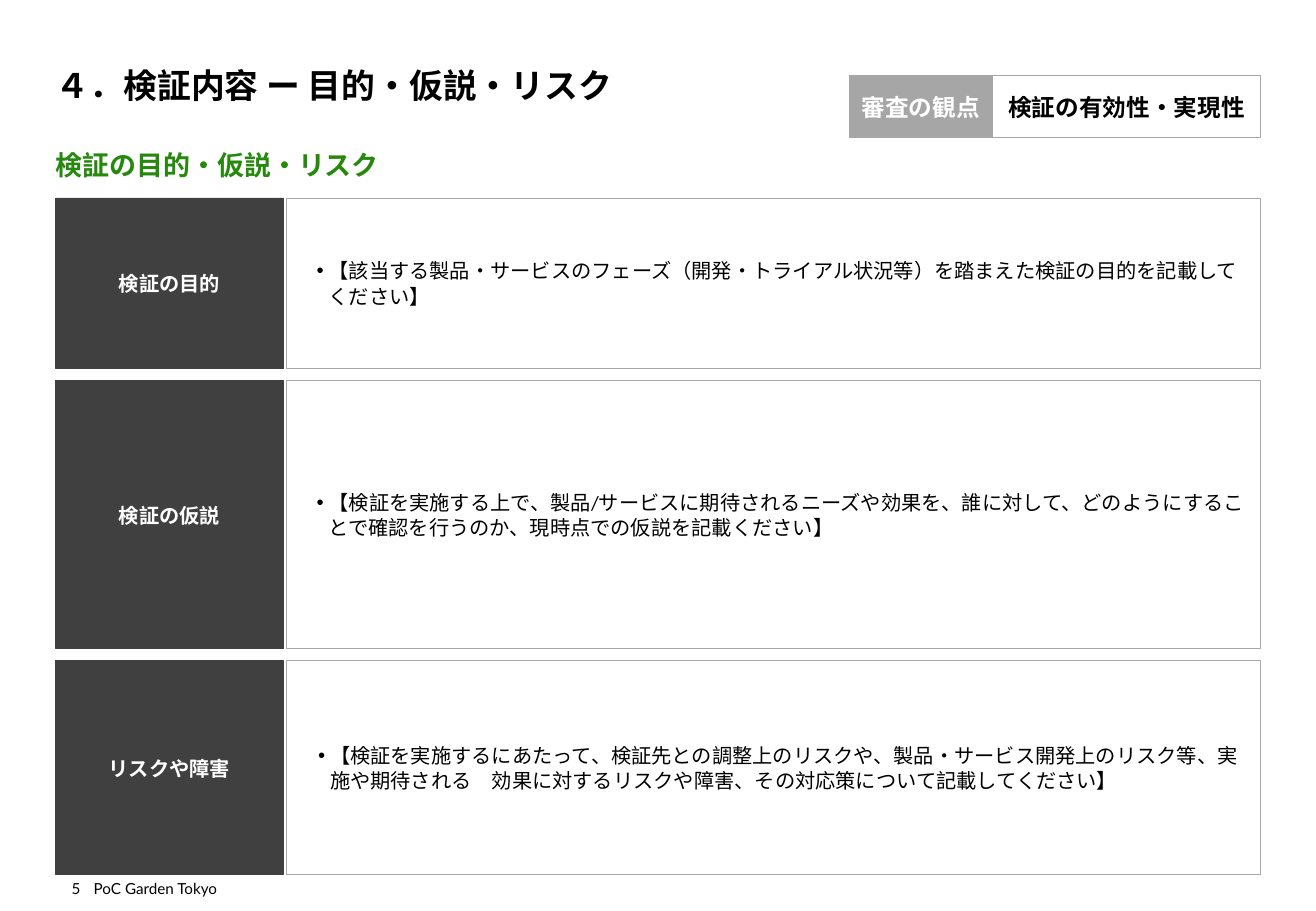
"""Build the verification slide: purpose, hypothesis and risks."""
from lxml.etree import SubElement
from pptx import Presentation
from pptx.dml.color import RGBColor
from pptx.enum.shapes import MSO_SHAPE
from pptx.enum.text import MSO_ANCHOR as Anchor, PP_ALIGN as Align
from pptx.oxml.ns import qn
from pptx.util import Cm, Pt

CJK = "Noto Sans CJK JP"


def color(hex_string):
    return RGBColor.from_string(hex_string)


def add_text(shape, text, size, font, text_color, bold=False, align=Align.LEFT,
             anchor=Anchor.MIDDLE, insets=(0, 0, 0, 0), wrap=True, bullet_indent=None):
    frame = shape.text_frame
    frame.word_wrap = wrap
    frame.vertical_anchor = anchor
    frame.margin_left, frame.margin_top, frame.margin_right, frame.margin_bottom = map(Cm, insets)
    paragraph = frame.paragraphs[0]
    paragraph.text = text
    paragraph.alignment = align
    properties = paragraph._p.get_or_add_pPr()
    if bullet_indent is not None:
        properties.set("marL", str(Cm(bullet_indent)))
        properties.set("indent", str(Cm(-0.25)))
        SubElement(properties, qn("a:buFont"), typeface="Arial")
        SubElement(properties, qn("a:buChar"), char="•")
    paragraph.font.size = Pt(size)
    paragraph.font.bold = bold
    paragraph.font.name = font
    paragraph.font.color.rgb = color(text_color)
    SubElement(properties.find(qn("a:defRPr")), qn("a:ea"), typeface=CJK)
    return paragraph


presentation = Presentation()
presentation.slide_width, presentation.slide_height = Cm(27.51), Cm(19.05)
slide = presentation.slides.add_slide(presentation.slide_layouts[6])

texts = [
    ("PoC Garden Tokyo", (1.96, 18.29, 11.3, 0.48), 9, "000000", False, Align.LEFT, Anchor.BOTTOM, True),
    ("5", (1.17, 18.29, 0.51, 0.48), 9, "000000", False, Align.RIGHT, Anchor.BOTTOM, False),
    ("検証の目的・仮説・リスク", (1.17, 2.79, 12.09, 1.3), 16, "26890D", True, Align.LEFT, Anchor.MIDDLE, True),
    ("４．検証内容 ー 目的・仮説・リスク", (1.17, 0.51, 25.2, 1.7), 20, "000000", True, Align.LEFT, Anchor.BOTTOM, True),
]
for text, box, size, text_color, bold, align, anchor, wrap in texts:
    textbox = slide.shapes.add_textbox(*map(Cm, box))
    add_text(textbox, text, size, "Lato", text_color, bold, align, anchor, wrap=wrap)

rows = [
    ("検証の目的", 3.56, 0.4, 0.48,
     "【該当する製品・サービスのフェーズ（開発・トライアル状況等）を踏まえた検証の目的を記載してください】"),
    ("検証の仮説", 5.61, 0.4, 0.48,
     "【検証を実施する上で、製品/サービスに期待されるニーズや効果を、誰に対して、どのようにすることで確認を行うのか、現時点での仮説を記載ください】"),
    ("リスクや障害", 4.47, 0.2, 0.71,
     "【検証を実施するにあたって、検証先との調整上のリスクや、製品・サービス開発上のリスク等、実施や期待される　効果に対するリスクや障害、その対応策について記載してください】"),
]
panels = [
    ("検証の有効性・実現性", (20.75, 1.57, 5.61, 1.3), "FFFFFF", "A6A6A6", 14, CJK, "000000", True, 0.2, None),
    ("審査の観点", (17.75, 1.57, 3, 1.3), "A6A6A6", "A6A6A6", 14, CJK, "FFFFFF", True, 0.2, None),
]
top = 4.14
for label, height, inset, indent, description in rows:
    panels.append((description, (5.99, top, 20.37, height), "FFFFFF", "A7A8AA",
                   12, "Calibri", "000000", False, inset, indent))
    panels.append((label, (1.17, top, 4.75, height), "404040", "404040",
                   12, "Calibri", "FFFFFF", True, 0.2, None))
    top += height + 0.25

for text, box, fill, line, size, font, text_color, bold, inset, indent in panels:
    panel = slide.shapes.add_shape(MSO_SHAPE.RECTANGLE, *map(Cm, box))
    panel.shadow.inherit = False
    panel.fill.solid()
    panel.fill.fore_color.rgb = color(fill)
    panel.line.color.rgb = color(line)
    panel.line.width = Pt(0.5)
    align = Align.CENTER if indent is None else Align.LEFT
    paragraph = add_text(panel, text, size, font, text_color, bold, align,
                         insets=(inset, 0.2, 0.2, 0.2), bullet_indent=indent)
    paragraph.line_spacing = 1.06

presentation.save("out.pptx")
